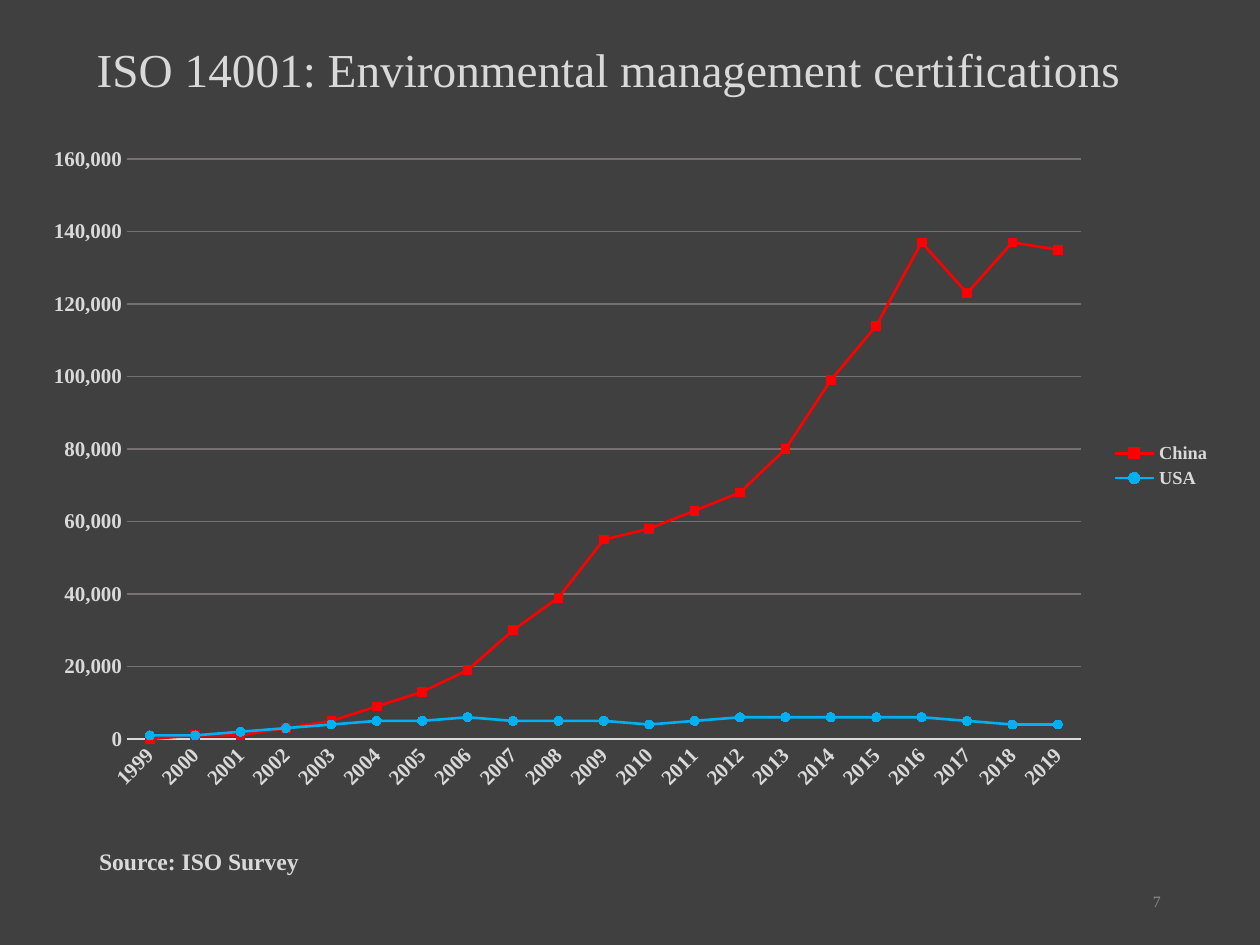
"""Build the slide on ISO 14001 certifications in China and the USA."""
from pptx import Presentation
from pptx.chart.data import CategoryChartData as ChartData
from pptx.dml.color import RGBColor
from pptx.enum.chart import XL_CHART_TYPE as Kind, XL_LEGEND_POSITION as Side
from pptx.enum.chart import XL_MARKER_STYLE as Mark, XL_TICK_MARK as Tick
from pptx.enum.text import MSO_ANCHOR as Anchor, PP_ALIGN as Align
from pptx.oxml import parse_xml
from pptx.oxml.ns import nsdecls
from pptx.util import Cm, Pt

DARK = RGBColor(0x40, 0x40, 0x40)
LIGHT = RGBColor(0xD9, 0xD9, 0xD9)
GREY = RGBColor(0x8C, 0x8C, 0x8C)
GRID = RGBColor(0x76, 0x71, 0x71)
RED = RGBColor(0xFF, 0x00, 0x00)
BLUE = RGBColor(0x00, 0xB0, 0xF0)

YEARS = [str(year) for year in range(1999, 2020)]
CHINA = [0, 1, 1, 3, 5, 9, 13, 19, 30, 39, 55, 58, 63, 68, 80, 99, 114, 137, 123, 137, 135]
USA = [1, 1, 2, 3, 4, 5, 5, 6, 5, 5, 5, 4, 5, 6, 6, 6, 6, 6, 5, 4, 4]
LINES = [
    ("China", CHINA, RED, Mark.SQUARE),
    ("USA", USA, BLUE, Mark.CIRCLE),
]
FRAME = {"x": 0.08, "y": 0.04, "w": 0.8, "h": 0.87}


class Page:
    """Hold the style and the current slide."""

    face = "Times New Roman"

    def __init__(self, deck):
        self.slide = deck.slides.add_slide(deck.slide_layouts[6])
        fill = self.slide.background.fill
        fill.solid()
        fill.fore_color.rgb = DARK

    def style(self, font, size, color=LIGHT, bold=False):
        """Set face, size, colour and weight."""
        font.name, font.size, font.bold = self.face, Pt(size), bold
        font.color.rgb = color

    def text(self, words, box, size, color=LIGHT, bold=False,
             align=Align.LEFT, anchor=Anchor.MIDDLE):
        """Add one line of text."""
        frame = self.slide.shapes.add_textbox(*map(Cm, box)).text_frame
        frame.word_wrap = True
        frame.vertical_anchor = anchor
        par = frame.paragraphs[0]
        par.alignment = align
        run = par.add_run()
        run.text = words
        self.style(run.font, size, color, bold)

    def chart(self, lines, box):
        """Add the line chart."""
        data = ChartData(number_format="#,##0")
        data.categories = YEARS
        for name, counts, _, _ in lines:
            data.add_series(name, [count * 1000 for count in counts])
        chart = self.slide.shapes.add_chart(
            Kind.LINE_MARKERS, *map(Cm, box), data).chart
        self.style(chart.font, 10)
        chart.has_title = False
        chart.has_legend = True
        chart.legend.position = Side.RIGHT
        chart.legend.include_in_layout = False
        self.style(chart.legend.font, 10.5, bold=True)
        for series, (_, _, color, mark) in zip(chart.plots[0].series, lines):
            self.series(series, color, mark)
        self.axes(chart)
        self.area(chart)

    def series(self, series, color, mark):
        """Style one line and its markers."""
        series.smooth = False
        series.format.line.color.rgb = color
        series.format.line.width = Pt(1.5)
        series.marker.style, series.marker.size = mark, 5
        look = series.marker.format
        look.fill.solid()
        look.fill.fore_color.rgb = color
        look.line.color.rgb = color

    def axes(self, chart):
        """Style both axes and the grid."""
        years, counts = chart.category_axis, chart.value_axis
        for axis in (years, counts):
            axis.major_tick_mark = axis.minor_tick_mark = Tick.NONE
            self.style(axis.tick_labels.font, 12, bold=True)
        years.format.line.color.rgb = LIGHT
        years.format.line.width = Pt(0.75)
        for body in chart.element.xpath(".//c:catAx/c:txPr/a:bodyPr"):
            body.set("rot", str(-45 * 60000))
        counts.minimum_scale, counts.maximum_scale = 0, 160000
        counts.major_unit = 20000
        counts.tick_labels.number_format = "#,##0"
        counts.tick_labels.number_format_is_linked = False
        counts.format.line.fill.background()
        counts.has_major_gridlines = True
        grid = counts.major_gridlines.format.line
        grid.color.rgb, grid.width = GRID, Pt(0.75)

    def area(self, chart):
        """Place and fill the plot area."""
        plot = chart.element.xpath(".//c:plotArea")[0]
        for old in plot.xpath("./c:layout"):
            plot.remove(old)
        modes = "".join(f'<c:{key}Mode val="edge"/>' for key in "xy")
        sizes = "".join(f'<c:{key} val="{part}"/>' for key, part in FRAME.items())
        plot.insert(0, parse_xml(
            f'<c:layout {nsdecls("c")}><c:manualLayout><c:layoutTarget val="inner"/>'
            f'{modes}{sizes}</c:manualLayout></c:layout>'))
        plot.append(parse_xml(
            f'<c:spPr {nsdecls("c", "a")}><a:solidFill><a:srgbClr val="{DARK}"/>'
            '</a:solidFill></c:spPr>'))


def main():
    """Build and save the deck."""
    deck = Presentation()
    deck.slide_width, deck.slide_height = Cm(25.4), Cm(19.05)
    page = Page(deck)
    page.text("ISO 14001: Environmental management certifications",
              (1.7, 0.53, 21.9, 1.7), 27)
    page.text("Source: ISO Survey", (1.75, 16.94, 12.7, 0.84), 13.5,
              bold=True, anchor=Anchor.TOP)
    page.chart(LINES, (0.64, 2.67, 24.03, 13.44))
    page.text("7", (17.93, 17.65, 5.72, 1.02), 9, GREY, align=Align.RIGHT)
    deck.save("out.pptx")


if __name__ == "__main__":
    main()
